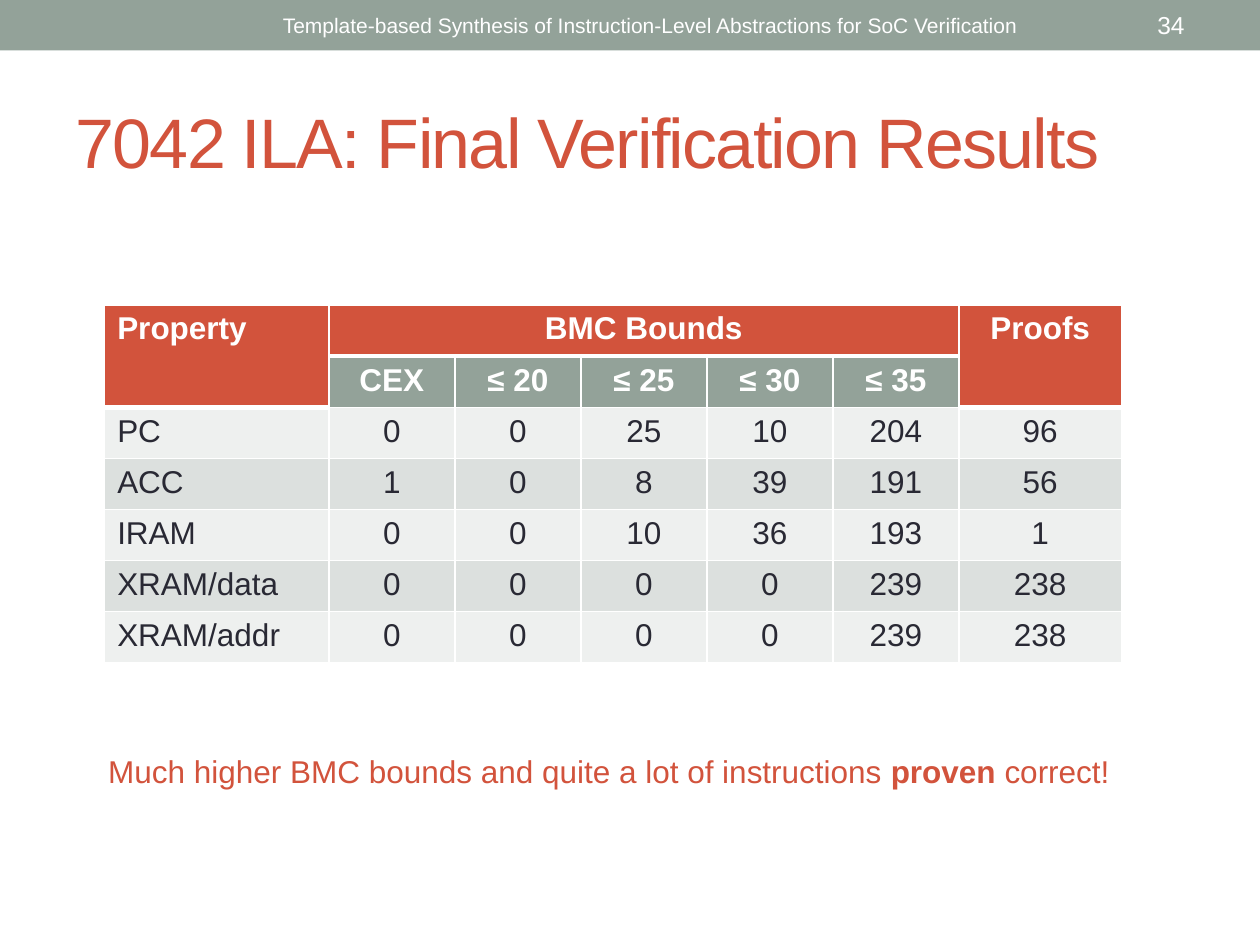
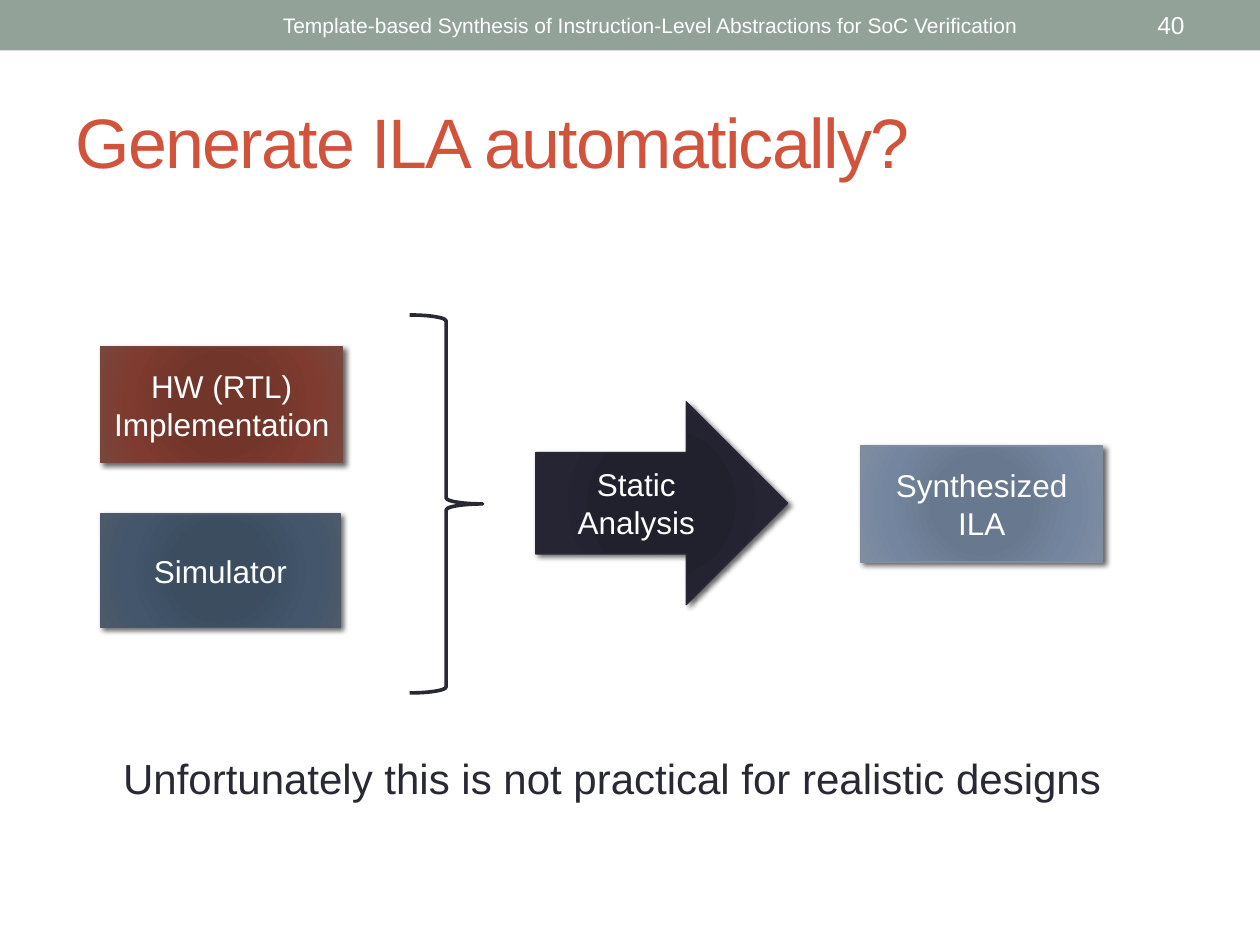
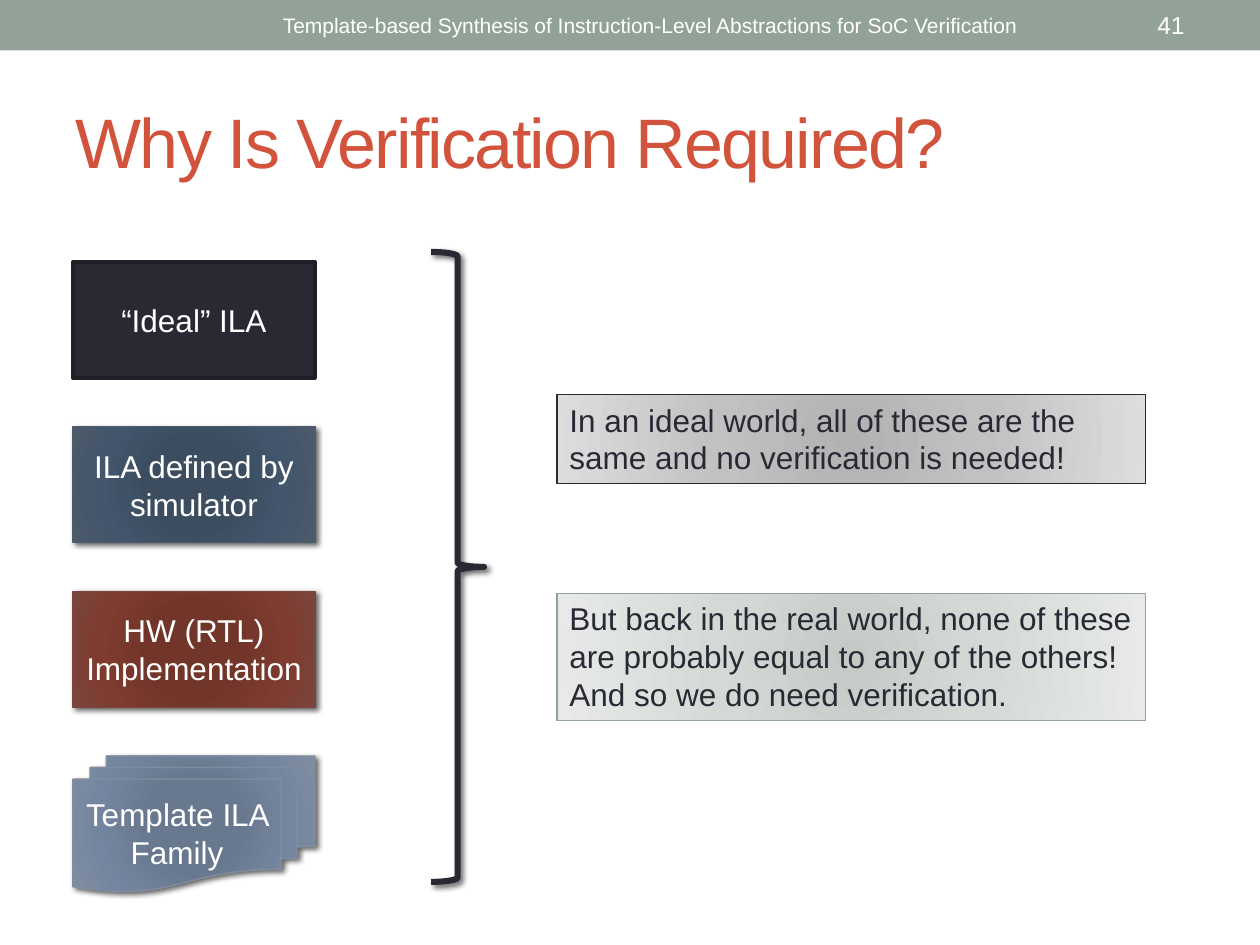
import pptx
import pptx.util
import pptx.oxml
import pptx.oxml.ns
import pptx.dml.color
import pptx.enum.shapes
import pptx.enum.text

Cm = pptx.util.Cm
Pt = pptx.util.Pt
qn = pptx.oxml.ns.qn
SHAPES = pptx.enum.shapes.MSO_SHAPE
ANCHOR = pptx.enum.text.MSO_ANCHOR
ALIGN = pptx.enum.text.PP_ALIGN
FONT = "Arial"
TALK_TITLE = "Template-based Synthesis of Instruction-Level Abstractions for SoC Verification"

COLORS = {
    "white": "FFFFFF",
    "ink": "292934",
    "ink_edge": "1E1E26",
    "accent": "D2533C",
    "sage": "93A299",
    "row_light": "EEF0EF",
    "row_dark": "DCE0DE",
}

GRADIENTS = {
    "simulator": {0: "3B4D61", 34: "3C4D60", 70: "43566B", 100: "4C5A6A"},
    "hardware": {0: "743327", 34: "72352A", 70: "7F3B2F", 100: "79463D"},
    "analysis": {0: "21212F", 34: "21212E", 70: "252534", 100: "292934"},
    "template": {0: "677790", 34: "68788E", 70: "74869F", 100: "808DA0"},
    "ideal_note": {0: "B2B2B3", 45: "C1C1C2", 100: "DDDDDE"},
    "real_note": {0: "C4CAC6", 45: "D3DAD6", 100: "E7EAE8"},
}

RESULTS = [
    ["Property", "BMC Bounds", "", "", "", "", "Proofs"],
    ["", "CEX", "≤ 20", "≤ 25", "≤ 30", "≤ 35", ""],
    ["PC", "0", "0", "25", "10", "204", "96"],
    ["ACC", "1", "0", "8", "39", "191", "56"],
    ["IRAM", "0", "0", "10", "36", "193", "1"],
    ["XRAM/data", "0", "0", "0", "0", "239", "238"],
    ["XRAM/addr", "0", "0", "0", "0", "239", "238"],
]


def rgb(name):
    return pptx.dml.color.RGBColor.from_string(COLORS.get(name, name))


def drawing_xml(tag, attributes, content=""):
    namespace = pptx.oxml.ns.nsdecls("a")
    return pptx.oxml.parse_xml(f"<a:{tag} {namespace} {attributes}>{content}</a:{tag}>")


def write(frame, text, size, color, align=ALIGN.LEFT, bold=False):
    para = frame.paragraphs[0]
    para.alignment = align
    para.font.name = FONT
    para.font.size = Pt(size)
    para.font.color.rgb = rgb(color)
    para.font.bold = bold
    para.add_run().text = text
    return para


def add_text(page, at, text, size, color, align=ALIGN.LEFT, anchor=ANCHOR.TOP, wrap=True):
    frame = page.shapes.add_textbox(*map(Cm, at)).text_frame
    frame.word_wrap = wrap
    frame.vertical_anchor = anchor
    return write(frame, text, size, color, align)


def add_band(page, layout):
    band = page.shapes.add_shape(SHAPES.RECTANGLE, 0, 0, Cm(25.4), Cm(1.02))
    band.shadow.inherit = False
    band.fill.solid()
    band.fill.fore_color.rgb = rgb("sage")
    band.line.fill.background()
    layout.element.cSld.spTree.insert(2, band.element)


def add_page(deck, title, number):
    layout = deck.slide_layouts.get_by_name("Title Only")
    page = deck.slides.add_slide(layout)
    if len(deck.slides) == 1:
        add_band(page, layout)
    holder = page.shapes.title
    holder.left, holder.top, holder.width, holder.height = map(Cm, (1.27, 1.47, 22.86, 2.74))
    frame = holder.text_frame
    frame.auto_size = pptx.enum.text.MSO_AUTO_SIZE.NONE
    frame.vertical_anchor = ANCHOR.MIDDLE
    write(frame, title, 40, "accent")
    for font in holder.element.iter(qn("a:defRPr")):
        font.set("spc", "-100")
    add_text(page, (5.28, 0.05, 15.67, 0.91), TALK_TITLE, 12, "white", ALIGN.CENTER, ANCHOR.MIDDLE)
    add_text(page, (21.16, 0.05, 2.97, 0.91), str(number), 14, "white", ALIGN.RIGHT, ANCHOR.MIDDLE)
    return page


def fill_radial(shape, stops):
    marks = "".join(
        f'<a:gs pos="{place * 1000}"><a:srgbClr val="{color}"/></a:gs>'
        for place, color in stops.items()
    )
    center = '<a:fillToRect l="100000" t="100000" r="100000" b="100000"/>'
    content = f'<a:gsLst>{marks}</a:gsLst><a:path path="circle">{center}</a:path>'
    geometry = shape.element.spPr.find(qn("a:prstGeom"))
    geometry.addnext(drawing_xml("gradFill", 'rotWithShape="1"', content))


def cast_shadow(shape):
    attributes = f'blurRad="{Pt(3)}" dist="{Pt(2)}" dir="2700000" rotWithShape="0"'
    color = '<a:srgbClr val="000000"><a:alpha val="60000"/></a:srgbClr>'
    effects = shape.element.spPr.find(qn("a:effectLst"))
    effects.append(drawing_xml("outerShdw", attributes, color))


def add_outlined(page, kind, at, line, width):
    shape = page.shapes.add_shape(kind, *map(Cm, at))
    shape.shadow.inherit = False
    shape.line.color.rgb = rgb(line)
    shape.line.width = Pt(width)
    return shape


def add_block(page, at, text, gradient, kind=SHAPES.RECTANGLE):
    stops = GRADIENTS[gradient]
    block = add_outlined(page, kind, at, stops[100], 0.75)
    fill_radial(block, stops)
    cast_shadow(block)
    block.text_frame.vertical_anchor = ANCHOR.MIDDLE
    write(block.text_frame, text, 18, "white", ALIGN.CENTER)


def add_note(page, at, text, gradient, line):
    note = add_outlined(page, SHAPES.RECTANGLE, at, line, 0.75)
    fill_radial(note, GRADIENTS[gradient])
    note.text_frame.vertical_anchor = ANCHOR.TOP
    write(note.text_frame, text, 18, "ink")


def add_brace(page, at, width):
    brace = add_outlined(page, SHAPES.RIGHT_BRACE, at, "ink", width)
    brace.fill.background()
    return brace


def set_borders(cell, bottom):
    content = f'<a:solidFill><a:srgbClr val="{COLORS["white"]}"/></a:solidFill>'
    properties = cell._tc.get_or_add_tcPr()
    for index, (side, width) in enumerate((("L", 1), ("R", 1), ("T", 1), ("B", bottom))):
        properties.insert(index, drawing_xml(f"ln{side}", f'w="{Pt(width)}"', content))


def add_results_table(page):
    widths = [4.52] + [2.54] * 5 + [3.28]
    row_height = 1.03
    last = len(widths) - 1
    frame = page.shapes.add_table(
        len(RESULTS), len(widths), Cm(2.11), Cm(6.15), Cm(sum(widths)), Cm(row_height * len(RESULTS))
    )
    table = frame.table
    table.horz_banding = False
    for column, width in zip(table.columns, widths):
        column.width = Cm(width)
    for row_index, values in enumerate(RESULTS):
        table.rows[row_index].height = Cm(row_height)
        for column_index, value in enumerate(values):
            cell = table.cell(row_index, column_index)
            header = row_index < 2
            heading = row_index == 0 or header and column_index in (0, last)
            if heading:
                fill = "accent"
            elif header:
                fill = "sage"
            else:
                fill = "row_dark" if row_index % 2 else "row_light"
            cell.fill.solid()
            cell.fill.fore_color.rgb = rgb(fill)
            set_borders(cell, 3 if heading else 1)
            align = ALIGN.CENTER if column_index else ALIGN.LEFT
            if value:
                write(cell.text_frame, value, 18, "white" if header else "ink", align, header)
    table.cell(0, 0).merge(table.cell(1, 0))
    table.cell(0, 1).merge(table.cell(0, last - 1))
    table.cell(0, last).merge(table.cell(1, last))


def build_results(deck):
    page = add_page(deck, "7042 ILA: Final Verification Results", 34)
    add_results_table(page)
    caption = add_text(
        page, (1.93, 15.04, 20.7, 1.02),
        "Much higher BMC bounds and quite a lot of instructions ", 18, "accent", wrap=False,
    )
    proven = caption.add_run()
    proven.text = "proven"
    proven.font.bold = True
    caption.add_run().text = " correct!"


def build_generation(deck):
    page = add_page(deck, "Generate ILA automatically?", 40)
    add_block(page, (2.03, 10.36, 4.83, 2.29), "Simulator", "simulator")
    add_block(page, (2.03, 6.99, 4.88, 2.34), "HW (RTL) Implementation", "hardware")
    add_brace(page, (8.26, 6.35, 1.47, 7.62), 2.08)
    add_block(page, (10.8, 8.1, 5.08, 4.09), "Static Analysis", "analysis", SHAPES.RIGHT_ARROW)
    add_block(page, (17.35, 8.99, 4.88, 2.34), "Synthesized ILA", "template")
    add_text(
        page, (2.03, 15.04, 20.62, 1.27),
        "Unfortunately this is not practical for realistic designs", 24, "ink", ALIGN.CENTER,
    )


def build_motivation(deck):
    page = add_page(deck, "Why Is Verification Required?", 41)
    left, width, height = 1.47, 4.88, 2.34
    tops = [5.28 + 3.32 * index for index in range(4)]
    ideal = add_outlined(page, SHAPES.RECTANGLE, (left, tops[0], width, height), "ink_edge", 2.08)
    ideal.fill.solid()
    ideal.fill.fore_color.rgb = rgb("ink")
    ideal.text_frame.vertical_anchor = ANCHOR.MIDDLE
    write(ideal.text_frame, "“Ideal” ILA", 18, "white", ALIGN.CENTER)
    add_block(page, (left, tops[1], width, height), "ILA defined by simulator", "simulator")
    add_block(page, (left, tops[2], width, height), "HW (RTL) Implementation", "hardware")
    add_block(
        page, (left, tops[3], width, 2.74),
        "Template ILA Family", "template", SHAPES.FLOWCHART_MULTIDOCUMENT,
    )
    cast_shadow(add_brace(page, (8.69, 5.08, 1.07, 12.7), 3.5))
    add_note(
        page, (11.23, 7.95, 11.86, 1.8),
        "In an ideal world, all of these are the same and no verification is needed!",
        "ideal_note", "ink",
    )
    add_note(
        page, (11.23, 11.96, 11.86, 2.57),
        "But back in the real world, none of these are probably equal to any of the others! "
        "And so we do need verification.",
        "real_note", "sage",
    )


def main():
    deck = pptx.Presentation()
    deck.slide_width, deck.slide_height = Cm(25.4), Cm(19.05)
    build_results(deck)
    build_generation(deck)
    build_motivation(deck)
    deck.save("out.pptx")


if __name__ == "__main__":
    main()
